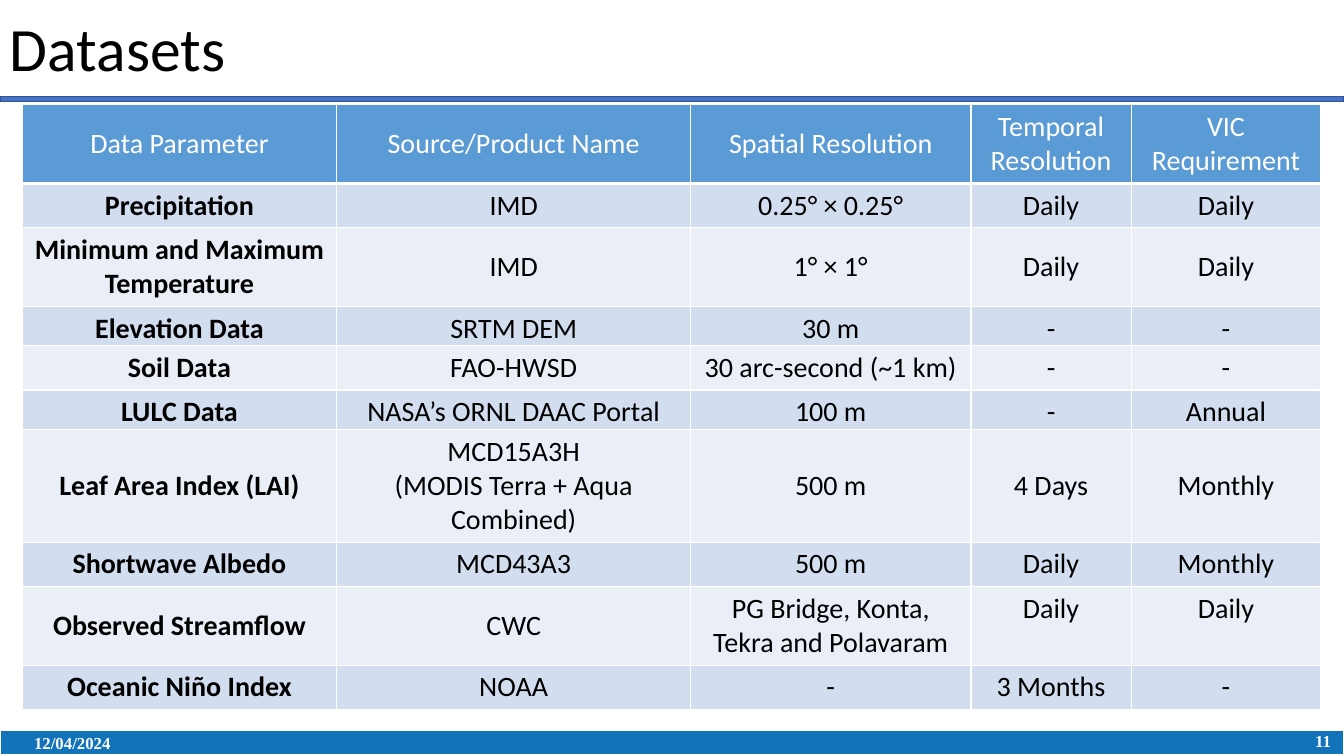
from lxml import etree
from pptx import Presentation
from pptx.dml.color import RGBColor
from pptx.enum import shapes, text
from pptx.oxml import ns
from pptx.util import Inches, Pt

THEME = {
    "white": "FFFFFF", "black": "000000",
    "rule": "4472C4", "rule_edge": "325491", "footer": "1373BA",
    "header": "5B9BD5", "bands": ("D2DEEF", "EAEFF7"),
    "body_font": "Calibri", "footer_font": "Times New Roman",
    "title_size": 44, "table_size": 20, "footer_size": 12,
}
CENTER, LEFT, RIGHT = text.PP_ALIGN.CENTER, text.PP_ALIGN.LEFT, text.PP_ALIGN.RIGHT


def write(paragraph, words, size, color, font="body_font", bold=False, align=LEFT):
    paragraph.alignment = align
    run = paragraph.add_run()
    run.text = words
    run.font.name = THEME[font]
    run.font.size = Pt(THEME[size])
    run.font.bold = bold
    run.font.color.rgb = RGBColor.from_string(THEME[color])


def add_border(cell, side, width):
    line = etree.SubElement(cell._tc.get_or_add_tcPr(), ns.qn(f"a:ln{side}"), w=str(Pt(width)))
    fill = etree.SubElement(line, ns.qn("a:solidFill"))
    etree.SubElement(fill, ns.qn("a:srgbClr"), val=THEME["white"])


deck = Presentation()
deck.slide_width, deck.slide_height = Inches(13.33), Inches(7.5)
slide = deck.slides.add_slide(deck.slide_layouts[6])

# Footer band and the rule under the title
for top, height, fill, edge in ((7.24, 0.25, "footer", "white"), (0.96, 0.05, "rule", "rule_edge")):
    bar = slide.shapes.add_shape(shapes.MSO_SHAPE.RECTANGLE, 0, Inches(top),
                                 Inches(13.33), Inches(height))
    bar.shadow.inherit = False
    bar.fill.solid()
    bar.fill.fore_color.rgb = RGBColor.from_string(THEME[fill])
    bar.line.color.rgb = RGBColor.from_string(THEME[edge])
    bar.line.width = Pt(1)

# Title, date and page number
labels = (
    ("Datasets", (0, -0.09, 9.59, 1.21), "title_size", "black", "body_font", False, LEFT),
    ("12/04/2024", (0.24, 7.24, 1.5, 0.25), "footer_size", "white", "footer_font", True, LEFT),
    ("11", (12.88, 7.15, 0.42, 0.4), "footer_size", "white", "footer_font", True, RIGHT),
)
for words, place, *style in labels:
    frame = slide.shapes.add_textbox(*map(Inches, place)).text_frame
    frame.word_wrap = True
    frame.vertical_anchor = text.MSO_ANCHOR.MIDDLE
    write(frame.paragraphs[0], words, *style)
    if words == "Datasets":
        frame.paragraphs[0].line_spacing = 0.9

# Dataset table
datasets = (
    ("Data Parameter", "Source/Product Name", "Spatial Resolution",
     "Temporal Resolution", "VIC Requirement"),
    ("Precipitation", "IMD", "0.25° × 0.25°", "Daily", "Daily"),
    ("Minimum and Maximum Temperature", "IMD", "1° × 1°", "Daily", "Daily"),
    ("Elevation Data", "SRTM DEM", "30 m", "-", "-"),
    ("Soil Data", "FAO-HWSD", "30 arc-second (~1 km)", "-", "-"),
    ("LULC Data", "NASA’s ORNL DAAC Portal", "100 m", "-", "Annual"),
    ("Leaf Area Index (LAI)", "MCD15A3H\n(MODIS Terra + Aqua Combined)",
     "500 m", "4 Days", "Monthly"),
    ("Shortwave Albedo", "MCD43A3", "500 m", "Daily", "Monthly"),
    ("Observed Streamflow", "CWC", "PG Bridge, Konta, Tekra and Polavaram", "Daily", "Daily"),
    ("Oceanic Niño Index", "NOAA", "-", "3 Months", "-"),
)
column_widths = (3.12, 3.51, 2.78, 1.59, 1.88)
row_heights = (0.78, 0.44, 0.78, 0.39, 0.44, 0.39, 1.12, 0.44, 0.78, 0.44)
tight_rows = ("Elevation Data", "LULC Data")

table = slide.shapes.add_table(len(datasets), len(column_widths), Inches(0.22), Inches(1.04),
                               Inches(sum(column_widths)), Inches(sum(row_heights))).table
for column, width in zip(table.columns, column_widths):
    column.width = Inches(width)
for row, height in zip(table.rows, row_heights):
    row.height = Inches(height)

for r, dataset in enumerate(datasets):
    is_header, is_tight = r == 0, dataset[0] in tight_rows
    for c, value in enumerate(dataset):
        cell = table.cell(r, c)
        for side in "LRTB":
            thick = (is_header and side == "B") or (r == 1 and side == "T")
            add_border(cell, side, 3 if thick else 1)
        cell.fill.solid()
        cell.fill.fore_color.rgb = RGBColor.from_string(
            THEME["header"] if is_header else THEME["bands"][(r - 1) % 2])
        # The streamflow time steps sit level with the first line of the sites
        at_top = dataset[0] == "Observed Streamflow" and c >= 3
        cell.vertical_anchor = text.MSO_ANCHOR.TOP if at_top else text.MSO_ANCHOR.MIDDLE
        if is_tight:
            cell.margin_left = cell.margin_right = Inches(0.07)
            cell.margin_top = cell.margin_bottom = 0
        for n, words in enumerate(value.split("\n")):
            paragraph = cell.text_frame.add_paragraph() if n else cell.text_frame.paragraphs[0]
            if is_tight:
                paragraph.line_spacing = 1.15
                paragraph.space_after = Pt(10)
            write(paragraph, words, "table_size", "white" if is_header else "black",
                  bold=c == 0 and not is_header, align=CENTER)

deck.save("out.pptx")
